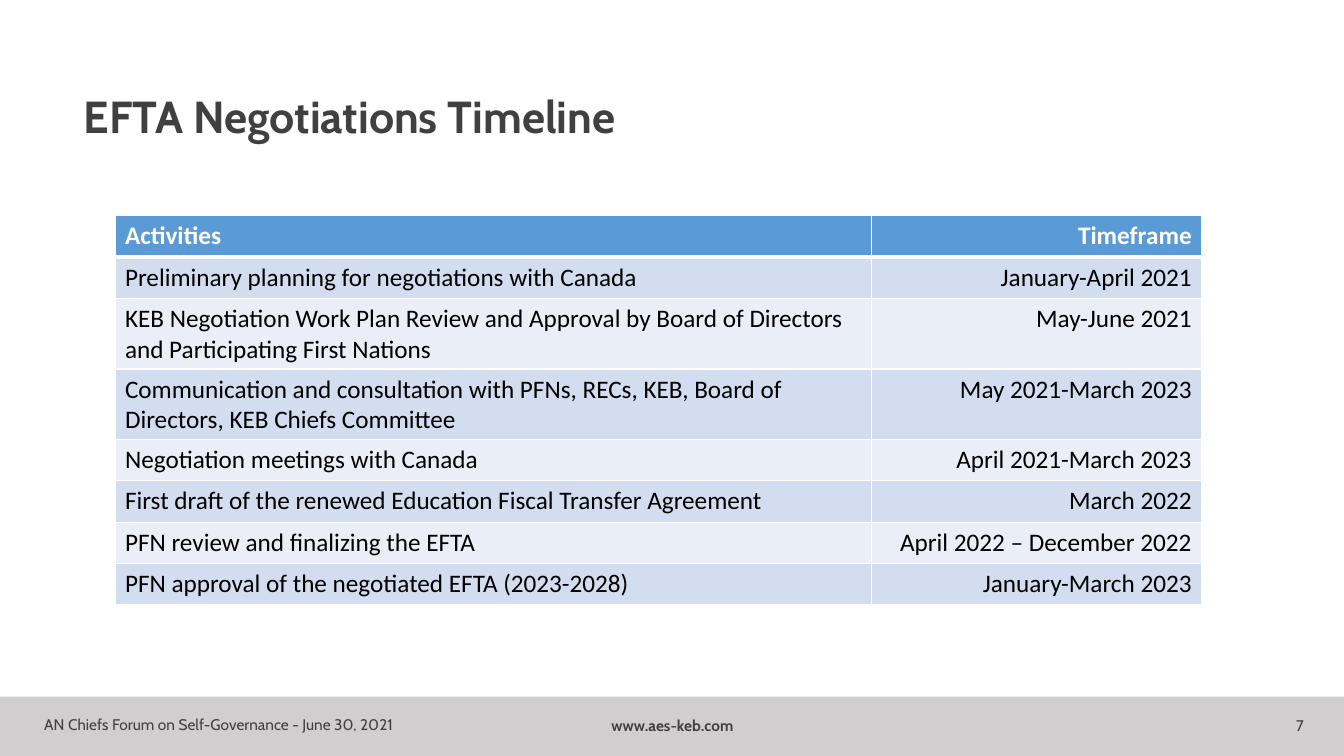
from dataclasses import dataclass

from lxml import etree
from pptx import Presentation
from pptx.dml.color import RGBColor
from pptx.enum import shapes, text
from pptx.oxml import ns
from pptx.util import Inches, Pt

COLORS = {
    "ink": "404040",
    "footer": "D0CECE",
    "header": "5B9BD5",
    "band_dark": "D2DEEF",
    "band_light": "EAEFF7",
    "white": "FFFFFF",
    "black": "000000",
}
LEFT, CENTER, RIGHT = text.PP_ALIGN.LEFT, text.PP_ALIGN.CENTER, text.PP_ALIGN.RIGHT


@dataclass(frozen=True)
class Style:
    font: str
    size: float
    color: str
    bold: bool = False


@dataclass(frozen=True)
class FooterItem:
    wording: str
    left: float
    width: float
    align: text.PP_ALIGN
    bold: bool = False
    line_spacing: float = 1.0


@dataclass(frozen=True)
class Step:
    activity: str
    timeframe: str


FOOTER_ITEMS = [
    FooterItem("www.aes-keb.com", 4.42, 4.5, CENTER, bold=True),
    FooterItem("7", 9.73, 3.3, RIGHT),
    FooterItem("AN Chiefs Forum on Self-Governance - June 30, 2021", 0.34, 3.69, LEFT, line_spacing=0.9),
]
STEPS = [
    Step("Activities", "Timeframe"),
    Step("Preliminary planning for negotiations with Canada", "January-April 2021"),
    Step("KEB Negotiation Work Plan Review and Approval by Board of Directors "
         "and Participating First Nations", "May-June 2021"),
    Step("Communication and consultation with PFNs, RECs, KEB, Board of "
         "Directors, KEB Chiefs Committee", "May 2021-March 2023"),
    Step("Negotiation meetings with Canada", "April 2021-March 2023"),
    Step("First draft of the renewed Education Fiscal Transfer Agreement", "March 2022"),
    Step("PFN review and finalizing the EFTA", "April 2022 – December 2022"),
    Step("PFN approval of the negotiated EFTA (2023-2028)", "January-March 2023"),
]
COLUMN_WIDTHS = [7.5, 3.28]
ROW_HEIGHT = 0.41


def rgb(name: str) -> RGBColor:
    return RGBColor.from_string(COLORS[name])


def write(frame, wording: str, style: Style, align: text.PP_ALIGN) -> None:
    paragraph = frame.paragraphs[0]
    paragraph.alignment = align
    run = paragraph.add_run()
    run.text = wording
    run.font.name = style.font
    run.font.size = Pt(style.size)
    run.font.bold = style.bold
    run.font.color.rgb = rgb(style.color)


def add_title(slide, wording: str) -> None:
    title = slide.shapes.title
    title.left, title.top = Inches(0.73), Inches(0.83)
    title.width, title.height = Inches(11.87), Inches(0.64)
    frame = title.text_frame
    frame.auto_size = text.MSO_AUTO_SIZE.SHAPE_TO_FIT_TEXT
    frame.vertical_anchor = text.MSO_ANCHOR.TOP
    write(frame, wording, Style("Cabin", 32, "ink", bold=True), LEFT)


def add_footer_band(slide) -> None:
    band = slide.shapes.add_shape(
        shapes.MSO_SHAPE.RECTANGLE, 0, Inches(6.91), Inches(13.33), Inches(0.59))
    band.shadow.inherit = False
    band.fill.solid()
    band.fill.fore_color.rgb = rgb("footer")
    band.line.fill.background()


def add_footer_item(slide, item: FooterItem) -> None:
    box = slide.shapes.add_textbox(Inches(item.left), Inches(7), Inches(item.width), Inches(0.4))
    frame = box.text_frame
    frame.word_wrap = True
    frame.vertical_anchor = text.MSO_ANCHOR.MIDDLE
    write(frame, item.wording, Style("Cabin", 11, "ink", item.bold), item.align)
    frame.paragraphs[0].line_spacing = item.line_spacing


def add_borders(cell, top: float, bottom: float) -> None:
    properties = cell._tc.get_or_add_tcPr()
    widths = {"lnL": 1, "lnR": 1, "lnT": top, "lnB": bottom}
    for position, (edge, width) in enumerate(widths.items()):
        line = etree.Element(ns.qn(f"a:{edge}"), w=str(Pt(width)))
        fill = etree.SubElement(line, ns.qn("a:solidFill"))
        etree.SubElement(fill, ns.qn("a:srgbClr"), val=COLORS["white"])
        properties.insert(position, line)


def add_timeline(slide, steps: list[Step]) -> None:
    timeline = slide.shapes.add_table(
        len(steps), len(COLUMN_WIDTHS), Inches(1.14), Inches(2.14),
        Inches(sum(COLUMN_WIDTHS)), Inches(ROW_HEIGHT * len(steps))).table
    for column, width in zip(timeline.columns, COLUMN_WIDTHS):
        column.width = Inches(width)
    for index, step in enumerate(steps):
        is_header = index == 0
        band = "header" if is_header else "band_dark" if index % 2 else "band_light"
        style = Style("Calibri", 18, "white" if is_header else "black", is_header)
        entries = [(step.activity, LEFT), (step.timeframe, RIGHT)]
        for cell, (wording, align) in zip(timeline.rows[index].cells, entries):
            cell.fill.solid()
            cell.fill.fore_color.rgb = rgb(band)
            add_borders(cell, top=3 if index == 1 else 1, bottom=3 if is_header else 1)
            write(cell.text_frame, wording, style, align)


def main() -> None:
    deck = Presentation()
    deck.slide_width, deck.slide_height = Inches(13.33), Inches(7.5)
    slide = deck.slides.add_slide(deck.slide_layouts.get_by_name("Title Only"))
    add_footer_band(slide)
    add_title(slide, "EFTA Negotiations Timeline")
    add_timeline(slide, STEPS)
    for item in FOOTER_ITEMS:
        add_footer_item(slide, item)
    deck.save("out.pptx")


if __name__ == "__main__":
    main()
